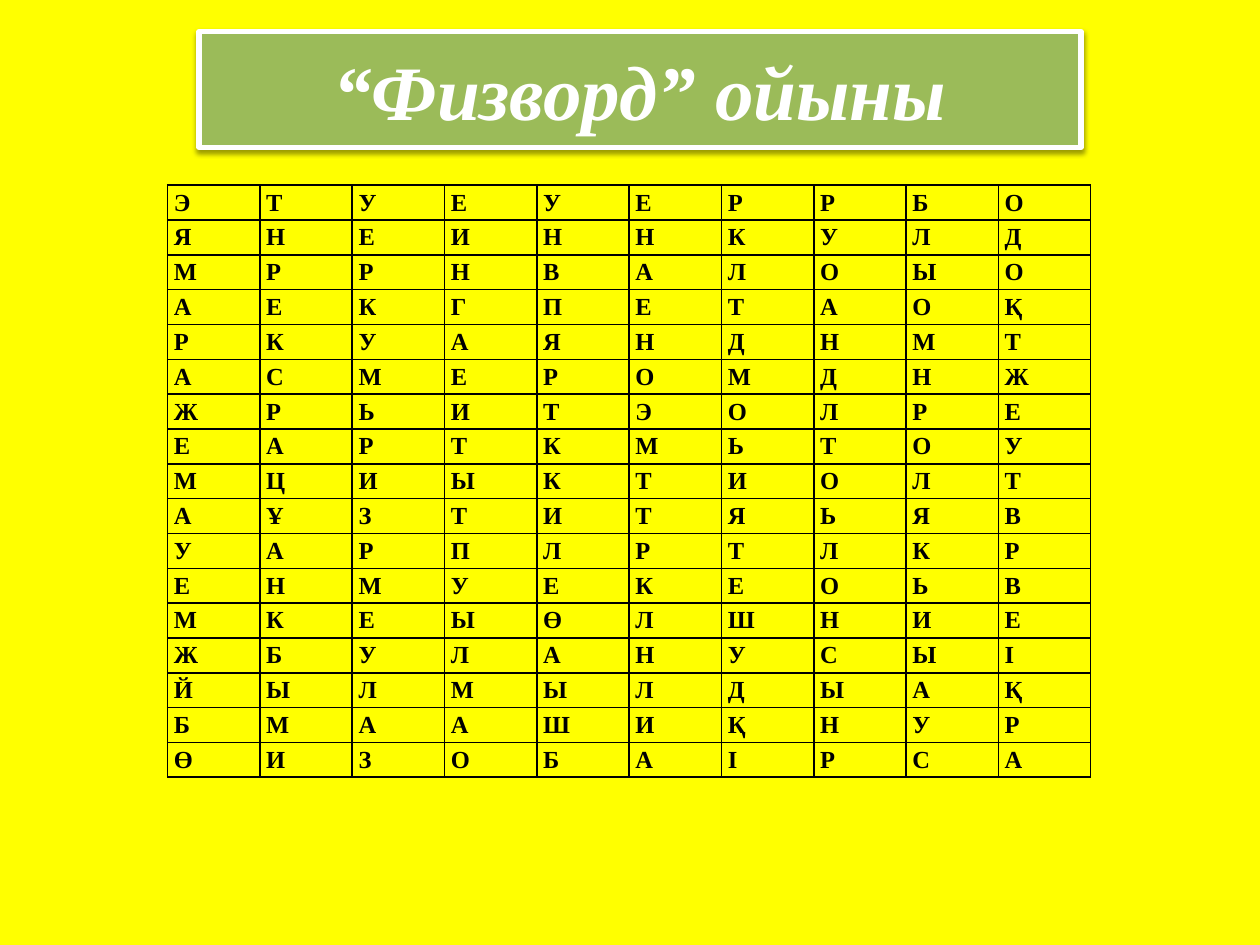
import lxml.etree
import pptx
import pptx.dml.color
import pptx.enum.shapes
import pptx.enum.text
import pptx.oxml.ns
import pptx.util

Inches = pptx.util.Inches
Pt = pptx.util.Pt
qn = pptx.oxml.ns.qn
RGB = pptx.dml.color.RGBColor.from_string
C = {"yellow": "FFFF00", "green": "9BBB59", "white": "FFFFFF", "black": "000000"}
LETTERS = [
    "ЭТУЕУЕРРБО",
    "ЯНЕИННКУЛД",
    "МРРНВАЛОЫО",
    "АЕКГПЕТАОҚ",
    "РКУАЯНДНМТ",
    "АСМЕРОМДНЖ",
    "ЖРЬИТЭОЛРЕ",
    "ЕАРТКМЬТОУ",
    "МЦИЫКТИОЛТ",
    "АҰЗТИТЯЬЯВ",
    "УАРПЛРТЛКР",
    "ЕНМУЕКЕОЬВ",
    "МКЕЫӨЛШНИЕ",
    "ЖБУЛАНУСЫІ",
    "ЙЫЛМЫЛДЫАҚ",
    "БМААШИҚНУР",
    "ӨИЗОБАІРСА",
]


def write(tf, text, size, color, italic=False, align="LEFT", spacing=1.0):
    p = tf.paragraphs[0]
    p.alignment = pptx.enum.text.PP_ALIGN[align]
    p.line_spacing = spacing
    r = p.add_run()
    r.text = text
    r.font.name = "Times New Roman"
    r.font.size = Pt(size)
    r.font.bold = True
    r.font.italic = italic
    r.font.color.rgb = RGB(C[color])


def add_color(parent, color):
    return lxml.etree.SubElement(parent, qn("a:srgbClr"), val=C[color])


prs = pptx.Presentation()
prs.slide_width = Inches(10)
prs.slide_height = Inches(7.5)
s = prs.slides.add_slide(prs.slide_layouts[6])
s.background.fill.solid()
s.background.fill.fore_color.rgb = RGB(C["yellow"])

sp = s.shapes.add_shape(
    pptx.enum.shapes.MSO_SHAPE.RECTANGLE, Inches(1.58), Inches(0.25), Inches(7), Inches(0.92)
)
sp.fill.solid()
sp.fill.fore_color.rgb = RGB(C["green"])
sp.line.color.rgb = RGB(C["white"])
sp.line.width = Pt(3)
sp.shadow.inherit = False
effects = sp._element.spPr.find(qn("a:effectLst"))
shadow = lxml.etree.SubElement(
    effects, qn("a:outerShdw"), blurRad=str(Pt(3.1)), dist=str(Pt(1.6)), dir="5400000", rotWithShape="0"
)
lxml.etree.SubElement(add_color(shadow, "black"), qn("a:alpha"), val="38000")
tf = sp.text_frame
tf.word_wrap = True
tf.vertical_anchor = pptx.enum.text.MSO_ANCHOR.MIDDLE
write(tf, "“Физворд” ойыны", size=44, color="white", italic=True, align="CENTER")

table = s.shapes.add_table(
    len(LETTERS), len(LETTERS[0]), Inches(1.33), Inches(1.47), Inches(7.33), Inches(4.7)
).table
table.first_row = False
table.horz_banding = False
for i, row in enumerate(LETTERS):
    for j, letter in enumerate(row):
        cell = table.cell(i, j)
        cell.margin_left = cell.margin_right = Inches(0.05)
        cell.margin_top = cell.margin_bottom = 0
        tcPr = cell._tc.get_or_add_tcPr()
        for side in ("lnL", "lnR", "lnT", "lnB"):
            ln = lxml.etree.SubElement(tcPr, qn("a:" + side), w=str(Pt(1)))
            add_color(lxml.etree.SubElement(ln, qn("a:solidFill")), "black")
        cell.fill.background()
        write(cell.text_frame, letter, size=14, color="black", spacing=1.15)

prs.save("out.pptx")
